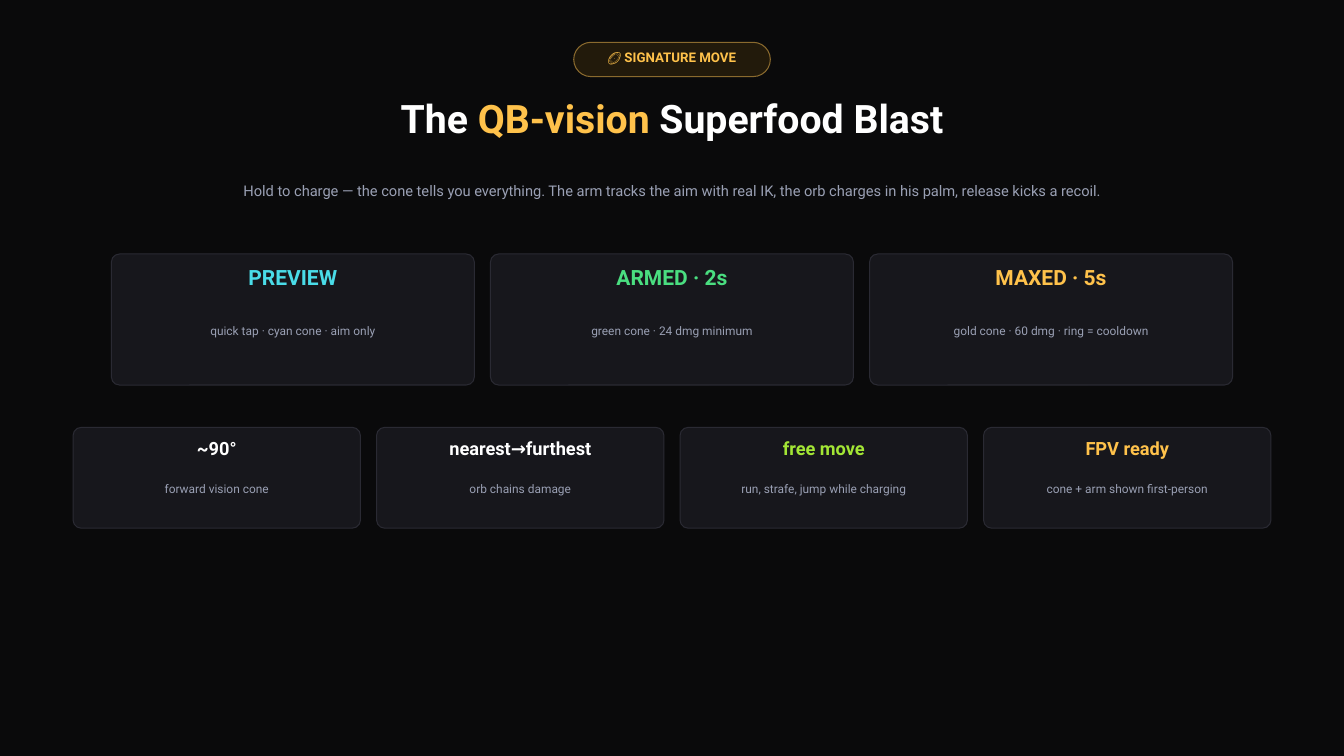
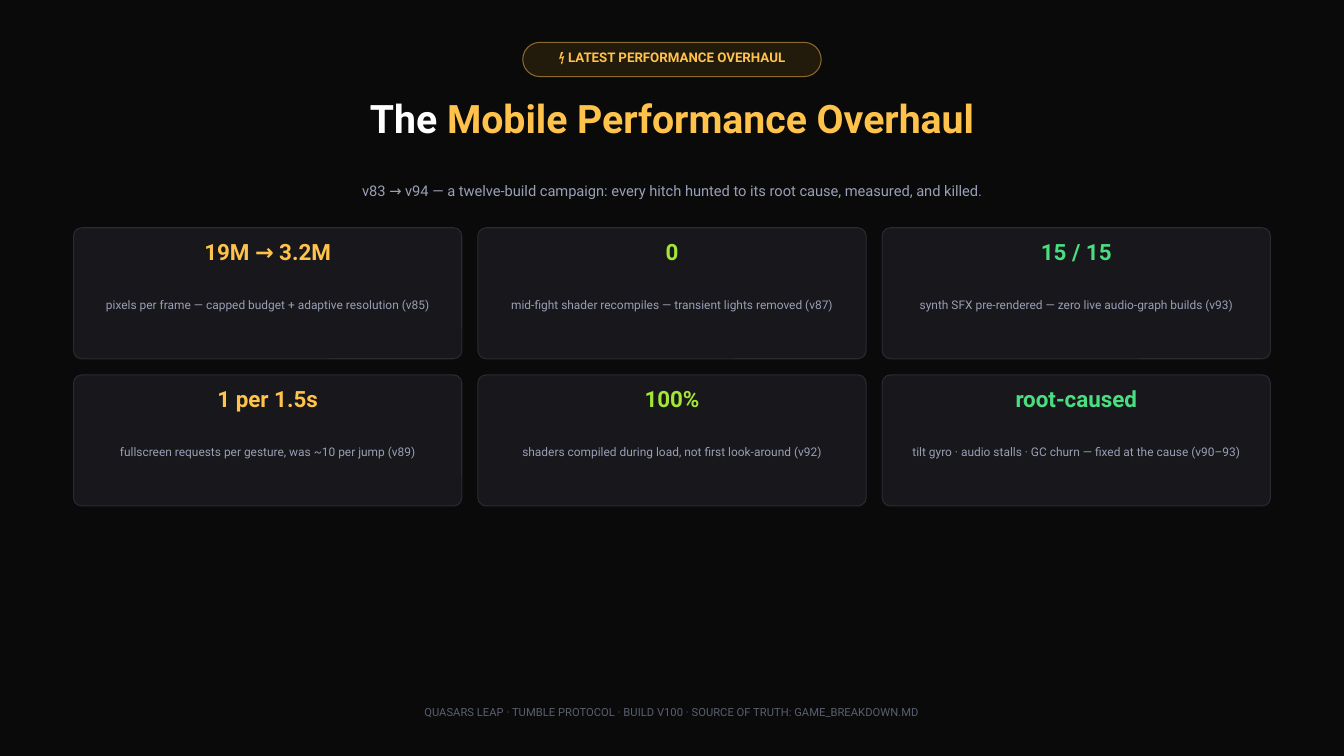
from pptx import Presentation
from pptx.dml import color
from pptx.enum import shapes, text
from pptx.util import Inches, Pt

# Shared look
FONT = "Roboto"
BACKGROUND, CARD_FILL, CARD_LINE = "0A0A0B", "17171C", "2A2A33"
BADGE_FILL, BADGE_LINE = "221A0B", "8A6A2E"
WHITE, GOLD, LIME, GREEN, CYAN = "FFFFFF", "FFC24B", "A3E635", "4ADE80", "4ADCE8"
MUTED, FOOTER = "9AA0B4", "5A5F70"
SLIDE_WIDTH, SLIDE_HEIGHT = 13.33, 7.5
GAP = 0.16
CORNER_RADIUS = 0.08


def rgb(hex_value):
    return color.RGBColor.from_string(hex_value)


def centred(width):
    return (SLIDE_WIDTH - width) / 2


def write(shape, runs, size, bold=False, spacing=None):
    """Fill a shape with one centred paragraph of (wording, colour) runs."""
    frame = shape.text_frame
    frame.word_wrap = True
    frame.auto_size = text.MSO_AUTO_SIZE.NONE
    frame.vertical_anchor = text.MSO_ANCHOR.TOP
    frame.margin_left = frame.margin_right = frame.margin_top = frame.margin_bottom = 0
    paragraph = frame.paragraphs[0]
    paragraph.alignment = text.PP_ALIGN.CENTER
    if spacing:
        paragraph.line_spacing = spacing
    for wording, colour in runs:
        run = paragraph.add_run()
        run.text = wording
        run.font.name = FONT
        run.font.size = Pt(size)
        run.font.bold = bold
        run.font.color.rgb = rgb(colour)


def add_label(slide, box, wording, colour, size, **style):
    label = slide.shapes.add_textbox(*map(Inches, box))
    write(label, [(wording, colour)], size, **style)


def add_panel(slide, box, radius, fill, line):
    panel = slide.shapes.add_shape(shapes.MSO_SHAPE.ROUNDED_RECTANGLE, *map(Inches, box))
    panel.adjustments[0] = radius / box[3]
    panel.shadow.inherit = False
    panel.fill.solid()
    panel.fill.fore_color.rgb = rgb(fill)
    panel.line.color.rgb = rgb(line)
    panel.line.width = Pt(0.75)


def add_badge(slide, wording, width):
    left, top, height = centred(width), 0.42, 0.34
    add_panel(slide, (left, top, width, height), height / 2, BADGE_FILL, BADGE_LINE)
    add_label(slide, (left, top + 0.07, width, 0.24), wording, GOLD, 9.5, bold=True)


def add_title(slide, runs):
    title = slide.shapes.title
    title.left, title.top = Inches(0.4), Inches(0.94)
    title.width, title.height = Inches(12.53), Inches(0.7)
    write(title, runs, 28, bold=True)


def add_card(slide, left, top, width, height, heading, colour, size, caption):
    add_panel(slide, (left, top, width, height), CORNER_RADIUS, CARD_FILL, CARD_LINE)
    add_label(slide, (left + 0.1, top + 0.1, width - 0.2, 0.45 * height),
              heading, colour, size, bold=True)
    add_label(slide, (left + 0.15, top + 0.52 * height, width - 0.3, 0.44 * height),
              caption, MUTED, 8.5, spacing=1.1)


def add_card_row(slide, top, width, height, size, cards):
    """Place equal cards in a row centred on the slide."""
    first = centred(len(cards) * (width + GAP) - GAP)
    for index, (heading, colour, caption) in enumerate(cards):
        add_card(slide, first + index * (width + GAP), top, width, height,
                 heading, colour, size, caption)


def add_slide(presentation, badge, badge_width, title_runs, intro, intro_height):
    """Start a slide with the shared badge, title and introduction."""
    slide = presentation.slides.add_slide(presentation.slide_layouts[5])
    add_badge(slide, badge, badge_width)
    add_title(slide, title_runs)
    add_label(slide, (0.97, 1.78, 11.4, intro_height), intro, MUTED, 10.5, spacing=1.15)
    return slide


def build_signature_move(presentation):
    slide = add_slide(
        presentation, "🏈 SIGNATURE MOVE", 1.95,
        [("The ", WHITE), ("QB-vision", GOLD), (" Superfood Blast", WHITE)],
        "Hold to charge — the cone tells you everything. The arm tracks the aim "
        "with real IK, the orb charges in his palm, release kicks a recoil.", 0.58)
    # Charge stages
    add_card_row(slide, 2.52, 3.6, 1.3, 15, [
        ("PREVIEW", CYAN, "quick tap · cyan cone · aim only"),
        ("ARMED · 2s", GREEN, "green cone · 24 dmg minimum"),
        ("MAXED · 5s", GOLD, "gold cone · 60 dmg · ring = cooldown"),
    ])
    # Traits
    add_card_row(slide, 4.24, 2.85, 1, 13, [
        ("~90°", WHITE, "forward vision cone"),
        ("nearest→furthest", WHITE, "orb chains damage"),
        ("free move", LIME, "run, strafe, jump while charging"),
        ("FPV ready", GOLD, "cone + arm shown first-person"),
    ])


def build_performance(presentation):
    slide = add_slide(
        presentation, "⚡ LATEST PERFORMANCE OVERHAUL", 2.96,
        [("The ", WHITE), ("Mobile Performance Overhaul", GOLD)],
        "v83 → v94 — a twelve-build campaign: every hitch hunted to its root cause, "
        "measured, and killed.", 0.32)
    # Results grid
    rows = [
        [("19M → 3.2M", GOLD, "pixels per frame — capped budget + adaptive resolution (v85)"),
         ("0", LIME, "mid-fight shader recompiles — transient lights removed (v87)"),
         ("15 / 15", GREEN, "synth SFX pre-rendered — zero live audio-graph builds (v93)")],
        [("1 per 1.5s", GOLD, "fullscreen requests per gesture, was ~10 per jump (v89)"),
         ("100%", LIME, "shaders compiled during load, not first look-around (v92)"),
         ("root-caused", GREEN,
          "tilt gyro · audio stalls · GC churn — fixed at the cause (v90–93)")],
    ]
    height = 1.3
    for index, cards in enumerate(rows):
        add_card_row(slide, 2.26 + index * (height + GAP), 3.85, height, 16, cards)
    # Footer
    add_label(slide, (0.5, 7, 12.33, 0.3),
              "QUASARS LEAP · TUMBLE PROTOCOL · BUILD V100 · "
              "SOURCE OF TRUTH: GAME_BREAKDOWN.MD", FOOTER, 8)


def main():
    presentation = Presentation()
    presentation.slide_width = Inches(SLIDE_WIDTH)
    presentation.slide_height = Inches(SLIDE_HEIGHT)
    background = presentation.slide_master.background.fill
    background.solid()
    background.fore_color.rgb = rgb(BACKGROUND)
    build_signature_move(presentation)
    build_performance(presentation)
    presentation.save("out.pptx")


if __name__ == "__main__":
    main()
